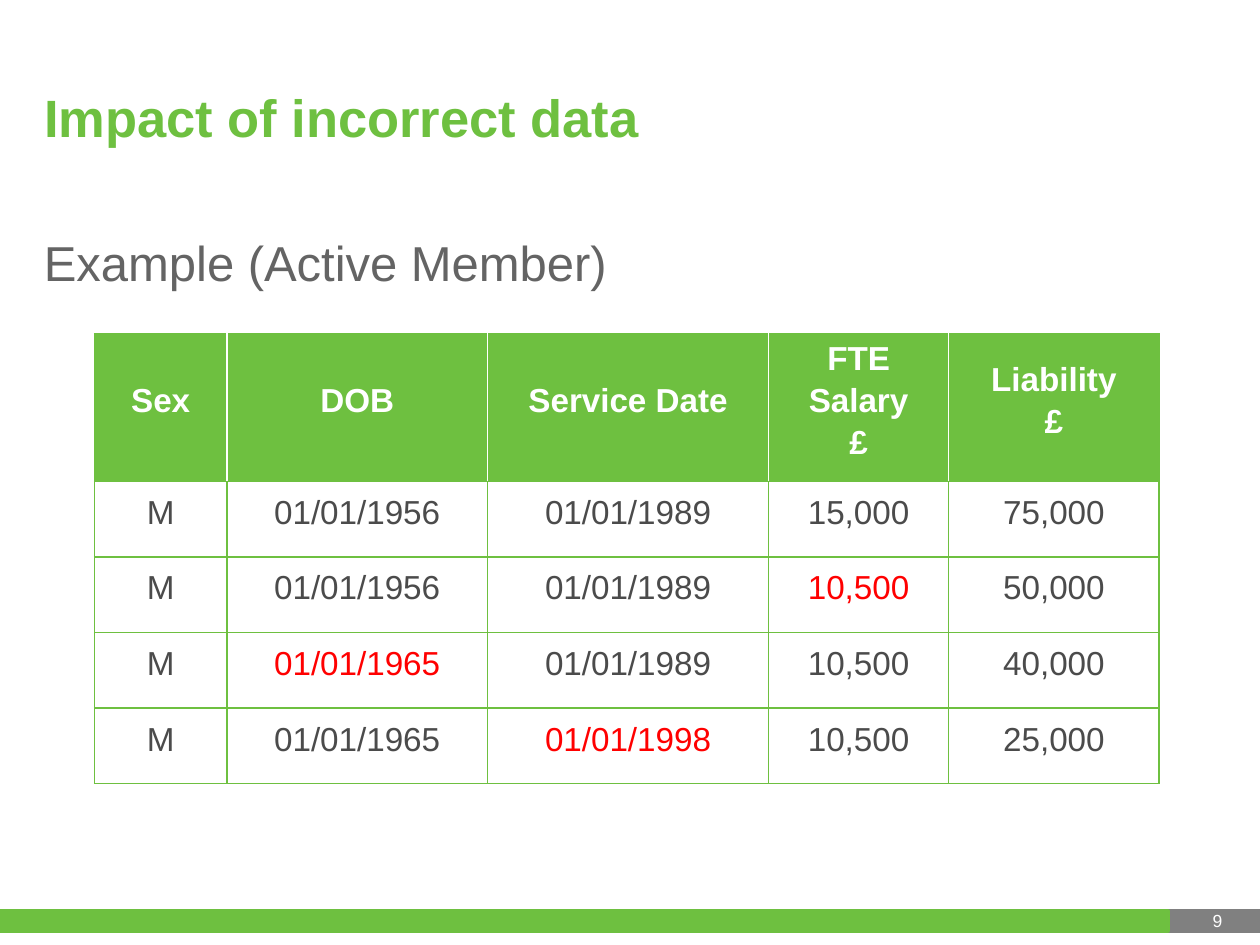
from lxml import etree
from pptx import Presentation
from pptx.dml.color import RGBColor
from pptx.enum import shapes, text
from pptx.oxml.ns import qn
from pptx.util import Inches, Pt

GREEN, GREY, WHITE = "6EC040", "808080", "FFFFFF"
BODY, DARK, RED = "646464", "4B4B4B", "FF0000"

HEADERS = ["Sex", "DOB", "Service Date", "FTE\nSalary\n£", "Liability\n£"]
MEMBERS = [
    ["M", "01/01/1956", "01/01/1989", "15,000", "75,000"],
    ["M", "01/01/1956", "01/01/1989", "10,500", "50,000"],
    ["M", "01/01/1965", "01/01/1989", "10,500", "40,000"],
    ["M", "01/01/1965", "01/01/1998", "10,500", "25,000"],
]
CHANGED = {(2, 3), (3, 1), (4, 2)}  # (row, column) of each altered value
COLUMNS = [1.05, 2.07, 2.23, 1.43, 1.67]
HEADER_HEIGHT, ROW_HEIGHT = 1.17, 0.6


def rgb(value):
    return RGBColor.from_string(value)


def add_run(p, words, size, color, bold=False):
    r = p.add_run()
    r.text = words
    r.font.name = "Arial"
    r.font.size = Pt(size)
    r.font.bold = bold
    r.font.color.rgb = rgb(color)


def place(sp, left, top, width, height):
    sp.left, sp.top = Inches(left), Inches(top)
    sp.width, sp.height = Inches(width), Inches(height)


def add_title(slide, left, top, width, height):
    title = slide.shapes.title
    place(title, left, top, width, height)
    tf = title.text_frame
    tf.vertical_anchor = text.MSO_ANCHOR.MIDDLE
    p = tf.paragraphs[0]
    p.alignment = text.PP_ALIGN.LEFT
    add_run(p, "Impact of incorrect data", 30, GREEN, True)


def add_text(slide, words, size, color, left, top, width, height,
             align=text.PP_ALIGN.LEFT, anchor=text.MSO_ANCHOR.TOP):
    box = slide.shapes.add_textbox(
        Inches(left), Inches(top), Inches(width), Inches(height))
    tf = box.text_frame
    tf.word_wrap = True
    tf.vertical_anchor = anchor
    p = tf.paragraphs[0]
    p.alignment = align
    add_run(p, words, size, color)


def add_bar(slide, color, left, top, width, height):
    bar = slide.shapes.add_shape(
        shapes.MSO_SHAPE.RECTANGLE,
        Inches(left), Inches(top), Inches(width), Inches(height))
    bar.shadow.inherit = False
    bar.fill.solid()
    bar.fill.fore_color.rgb = rgb(color)
    bar.line.color.rgb = rgb(color)
    bar.line.width = Pt(2)


def add_footer(slide, top, height):
    add_bar(slide, GREY, 9.17, top, 0.83, height)
    add_bar(slide, GREEN, 0, top, 9.27, height)
    add_text(slide, "9", 10, WHITE, 9.16, top - 0.38, 0.64, 0.59,
             text.PP_ALIGN.RIGHT, text.MSO_ANCHOR.BOTTOM)


def set_borders(cell, left, right):
    """Draw 1 pt borders, green above and below; they go before the fill."""
    tc_pr = cell._tc.get_or_add_tcPr()
    sides = {"a:lnL": left, "a:lnR": right, "a:lnT": GREEN, "a:lnB": GREEN}
    for i, (tag, color) in enumerate(sides.items()):
        ln = etree.Element(qn(tag), w=str(Pt(1)))
        fill = etree.SubElement(ln, qn("a:solidFill"))
        etree.SubElement(fill, qn("a:srgbClr"), val=color)
        tc_pr.insert(i, ln)


def fill_cell(cell, words, fill, color, bold):
    cell.fill.solid()
    cell.fill.fore_color.rgb = rgb(fill)
    cell.vertical_anchor = text.MSO_ANCHOR.MIDDLE
    cell.margin_left = cell.margin_right = Inches(0.07)
    cell.margin_top = cell.margin_bottom = 0
    tf = cell.text_frame
    for i, line in enumerate(words.split("\n")):
        p = tf.add_paragraph() if i else tf.paragraphs[0]
        p.alignment = text.PP_ALIGN.CENTER
        p.line_spacing = Pt(14)
        p.space_before = Pt(10 if i else 0)
        add_run(p, line, 19, color, bold)


def add_member_table(slide, left, top):
    rows = [HEADERS] + MEMBERS
    heights = [HEADER_HEIGHT] + [ROW_HEIGHT] * len(MEMBERS)
    table = slide.shapes.add_table(
        len(rows), len(COLUMNS), Inches(left), Inches(top),
        Inches(sum(COLUMNS)), Inches(sum(heights))).table
    for column, width in zip(table.columns, COLUMNS):
        column.width = Inches(width)
    last = len(COLUMNS) - 1
    for i, values in enumerate(rows):
        table.rows[i].height = Inches(heights[i])
        header = i == 0
        inner = WHITE if header else GREEN
        for j, words in enumerate(values):
            cell = table.cell(i, j)
            color = WHITE if header else RED if (i, j) in CHANGED else DARK
            fill_cell(cell, words, GREEN if header else WHITE, color, header)
            set_borders(cell, inner if j else GREEN,
                        inner if j < last else GREEN)


def main():
    prs = Presentation()
    prs.slide_width, prs.slide_height = Inches(10), Inches(7.5)
    slide = prs.slides.add_slide(prs.slide_layouts[5])
    add_footer(slide, 7.23, 0.16)
    add_title(slide, 0.25, 0.3, 9, 1.25)
    add_text(slide, "Example (Active Member)", 28, BODY, 0.25, 1.8, 9, 0.6)
    add_member_table(slide, 0.75, 2.65)
    prs.save("out.pptx")


if __name__ == "__main__":
    main()
